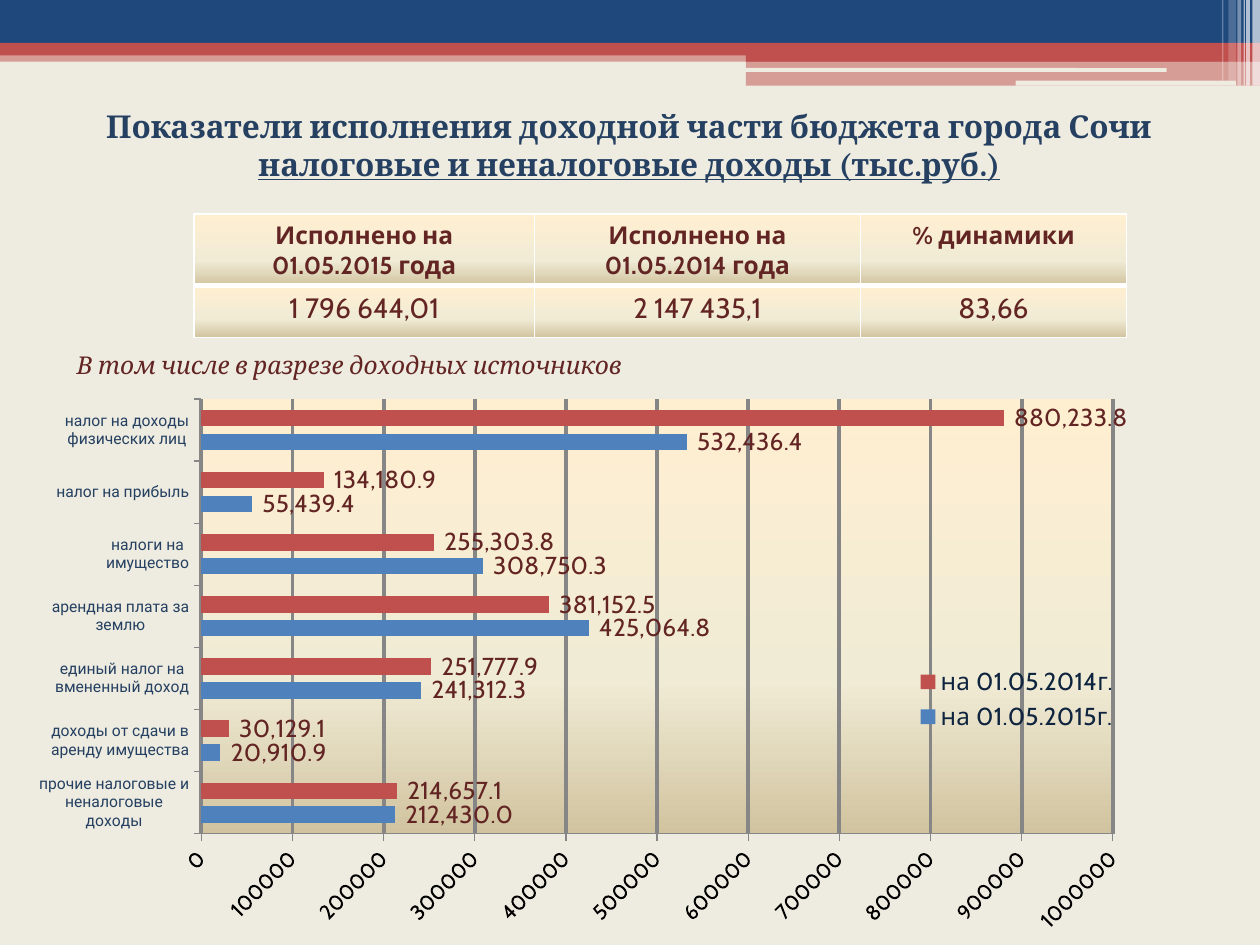
"""Builds the slide on Sochi budget revenue with a table and a bar chart."""
from lxml.etree import SubElement
from pptx import Presentation
from pptx.chart.data import CategoryChartData
from pptx.dml.color import RGBColor
from pptx.enum.chart import XL_CHART_TYPE, XL_LABEL_POSITION, XL_LEGEND_POSITION, XL_TICK_MARK
from pptx.enum.shapes import MSO_SHAPE
from pptx.enum.text import MSO_AUTO_SIZE, PP_ALIGN
from pptx.oxml import parse_xml
from pptx.oxml.ns import nsdecls, qn
from pptx.util import Pt

PX = 9144
CREAM = RGBColor(0xEE, 0xEC, 0xE1)
WHITE = RGBColor(0xFF, 0xFF, 0xFF)
BLACK = RGBColor(0, 0, 0)
GRAY = RGBColor(0x86, 0x86, 0x86)
NAVY = RGBColor(0x1F, 0x49, 0x7D)
RED = RGBColor(0xC0, 0x50, 0x4D)
BLUE = RGBColor(0x4F, 0x81, 0xBD)
TITLE = RGBColor(0x25, 0x40, 0x61)
MAROON = RGBColor(0x63, 0x25, 0x23)
INK = RGBColor(0x0F, 0x24, 0x3E)
SAND = ((0, RGBColor(0xFF, 0xEF, 0xD1)), (65, RGBColor(0xF0, 0xEB, 0xD5)),
        (100, RGBColor(0xD1, 0xC3, 0x9F)))

BANDS = [
    (0, 40, 1000, 9, RED, 50), (0, 0, 1000, 34, NAVY, 100), (0, 34, 1000, 10, RED, 100),
    (592, 39, 408, 10, RED, 100), (592, 48, 408, 20, RED, 50),
]
SLOTS = [(591, 54, 335, 3), (806, 64, 175, 4)]
STRIPES = [(994, 6, 68, 65), (989, 3, 68, 65), (987, 1, 68, 60),
           (982, 3, 68, 40), (975, 6, 64, 20), (970, 1, 64, 30)]
TABLE = [
    [["Исполнено на", "01.05.2015 года"], ["Исполнено на 01.05.2014 года"], ["% динамики"]],
    [["1 796 644,01"], ["2 147 435,1"], ["83,66"]],
]
SOURCES = ["прочие налоговые и неналоговые доходы", "доходы от сдачи в аренду имущества",
           "единый налог на вмененный доход", "арендная плата за землю",
           "налоги на имущество", "налог на прибыль", "налог на доходы физических лиц"]
SERIES = [
    ("на 01.05.2015г.", BLUE, [212430, 20910.9, 241312.3, 425064.8, 308750.3, 55439.4, 532436.4]),
    ("на 01.05.2014г.", RED, [214657.1, 30129.1, 251777.9, 381152.5, 255303.8, 134180.9, 880233.8]),
]


def style(font, size, color, name, bold=False, italic=False, underline=False):
    font.size, font.name = Pt(size), name
    font.bold, font.italic, font.underline = bold, italic, underline
    font.color.rgb = color


def write(tf, text, new=False, align=PP_ALIGN.LEFT, **fmt):
    p = tf.add_paragraph() if new else tf.paragraphs[0]
    p.alignment = align
    r = p.add_run()
    r.text = text
    style(r.font, **fmt)


def sand_fill(parent):
    stops = "".join(f'<a:gs pos="{at * 1000}"><a:srgbClr val="{c}"/></a:gs>' for at, c in SAND)
    parent.append(parse_xml(f'<a:gradFill {nsdecls("a")} rotWithShape="1"><a:gsLst>{stops}</a:gsLst>'
                            '<a:lin ang="5400000" scaled="0"/></a:gradFill>'))


def manual_layout(x, y, w, h, inner=False):
    target = '<c:layoutTarget val="inner"/>' if inner else ""
    sizes = "".join(f'<c:{k} val="{v}"/>' for k, v in zip("xywh", (x, y, w, h)))
    return parse_xml(f'<c:layout {nsdecls("c")}><c:manualLayout>{target}<c:xMode val="edge"/>'
                     f'<c:yMode val="edge"/>{sizes}</c:manualLayout></c:layout>')


def set_layout(parent, layout, after=None):
    for old in parent.findall(qn("c:layout")):
        parent.remove(old)
    if after is None:
        parent.insert(0, layout)
    else:
        parent.find(qn(after)).addnext(layout)


class Deck:
    def __init__(self):
        self.prs = Presentation()
        self.prs.slide_width, self.prs.slide_height = 1000 * PX, 750 * PX
        self.s = self.prs.slides.add_slide(self.prs.slide_layouts[6])
        self.s.background.fill.solid()
        self.s.background.fill.fore_color.rgb = CREAM

    def box(self, x, y, w, h, color, opacity=100, kind=MSO_SHAPE.RECTANGLE):
        sp = self.s.shapes.add_shape(kind, x * PX, y * PX, w * PX, h * PX)
        sp.shadow.inherit = False
        sp.fill.solid()
        sp.fill.fore_color.rgb = color
        sp.line.fill.background()
        if opacity < 100:
            clr = sp._element.spPr.find(".//" + qn("a:srgbClr"))
            SubElement(clr, qn("a:alpha"), val=str(opacity * 1000))

    def text(self, x, y, w, h):
        tf = self.s.shapes.add_textbox(x * PX, y * PX, w * PX, h * PX).text_frame
        tf.word_wrap = True
        tf.auto_size = MSO_AUTO_SIZE.SHAPE_TO_FIT_TEXT
        return tf

    def table(self, x, y, cols, rows, cells):
        tbl = self.s.shapes.add_table(len(rows), len(cols), x * PX, y * PX,
                                      sum(cols) * PX, sum(rows) * PX).table
        for col, w in zip(tbl.columns, cols):
            col.width = w * PX
        for i, h in enumerate(rows):
            tbl.rows[i].height = h * PX
            for j, lines in enumerate(cells[i]):
                cell = tbl.cell(i, j)
                for n, line in enumerate(lines):
                    write(cell.text_frame, line, new=n > 0, align=PP_ALIGN.CENTER, name="Cabin",
                          size=16 if i else 14, color=MAROON, bold=i == 0)
                self.borders(cell, top=3 if i else 1, bottom=1 if i else 3)

    def borders(self, cell, top, bottom):
        tc_pr = cell._tc.get_or_add_tcPr()
        for side, width in (("L", 1), ("R", 1), ("T", top), ("B", bottom)):
            tc_pr.append(parse_xml(f'<a:ln{side} {nsdecls("a")} w="{Pt(width)}"><a:solidFill>'
                                   f'<a:srgbClr val="{WHITE}"/></a:solidFill></a:ln{side}>'))
        sand_fill(tc_pr)

    def axis(self, axis, **fmt):
        axis.major_tick_mark = XL_TICK_MARK.OUTSIDE
        axis.minor_tick_mark = XL_TICK_MARK.NONE
        axis.format.line.color.rgb = GRAY
        style(axis.tick_labels.font, **fmt)

    def chart(self, x, y, w, h):
        data = CategoryChartData()
        data.categories = SOURCES
        for name, _, values in SERIES:
            data.add_series(name, values)
        chart = self.s.shapes.add_chart(XL_CHART_TYPE.BAR_CLUSTERED, x * PX, y * PX,
                                        w * PX, h * PX, data).chart
        chart.has_title = False
        style(chart.font, 18, BLACK, "Cambria")
        plot = chart.plots[0]
        plot.gap_width, plot.overlap, plot.vary_by_categories = 134, -45, False
        for ser, (_, color, _) in zip(plot.series, SERIES):
            ser.format.fill.solid()
            ser.format.fill.fore_color.rgb = color
            labels = ser.data_labels
            labels.show_value = True
            labels.position = XL_LABEL_POSITION.OUTSIDE_END
            labels.number_format = "_-* #,##0.0_р_._-"
            labels.number_format_is_linked = False
            style(labels.font, 14, MAROON, "Cabin")
        self.axis(chart.category_axis, size=9, color=TITLE, name="Roboto")
        val = chart.value_axis
        self.axis(val, size=12, color=BLACK, name="Cabin")
        val.minimum_scale, val.maximum_scale, val.major_unit = 0, 1000000, 100000
        val.tick_labels.number_format, val.tick_labels.number_format_is_linked = "0", False
        val.major_gridlines.format.line.color.rgb = GRAY
        val.major_gridlines.format.line.width = Pt(2.25)
        val._element.find(qn("c:txPr")).find(qn("a:bodyPr")).set("rot", "-2700000")
        chart.has_legend = True
        chart.legend.position = XL_LEGEND_POSITION.RIGHT
        chart.legend.include_in_layout = False
        style(chart.legend.font, 14, INK, "Cabin")
        set_layout(chart.legend._element, manual_layout(0.72, 0.51, 0.18, 0.13), "c:legendPos")
        area = chart._chartSpace.chart.plotArea
        set_layout(area, manual_layout(0.13, 0.05, 0.76, 0.76, inner=True))
        sand_fill(SubElement(area, qn("c:spPr")))


def main():
    deck = Deck()
    for band in BANDS:
        deck.box(*band)
    for slot in SLOTS:
        deck.box(*slot, CREAM, kind=MSO_SHAPE.ROUNDED_RECTANGLE)
    for x, w, h, opacity in STRIPES:
        deck.box(x, 0, w, h, WHITE, opacity)
    deck.chart(31, 294, 957, 454)
    title = deck.text(31, 80, 937, 71)
    heading = dict(align=PP_ALIGN.CENTER, size=18, color=TITLE, name="Cambria", bold=True)
    write(title, "Показатели исполнения доходной части бюджета города Сочи", **heading)
    write(title, "налоговые и неналоговые доходы (тыс.руб.)", new=True, underline=True, **heading)
    deck.table(154, 170, (270, 259, 211), (56, 41), TABLE)
    write(deck.text(51, 273, 472, 34), "В том числе в разрезе доходных источников",
          size=14, color=MAROON, name="Cambria", italic=True)
    deck.prs.save("out.pptx")


if __name__ == "__main__":
    main()
